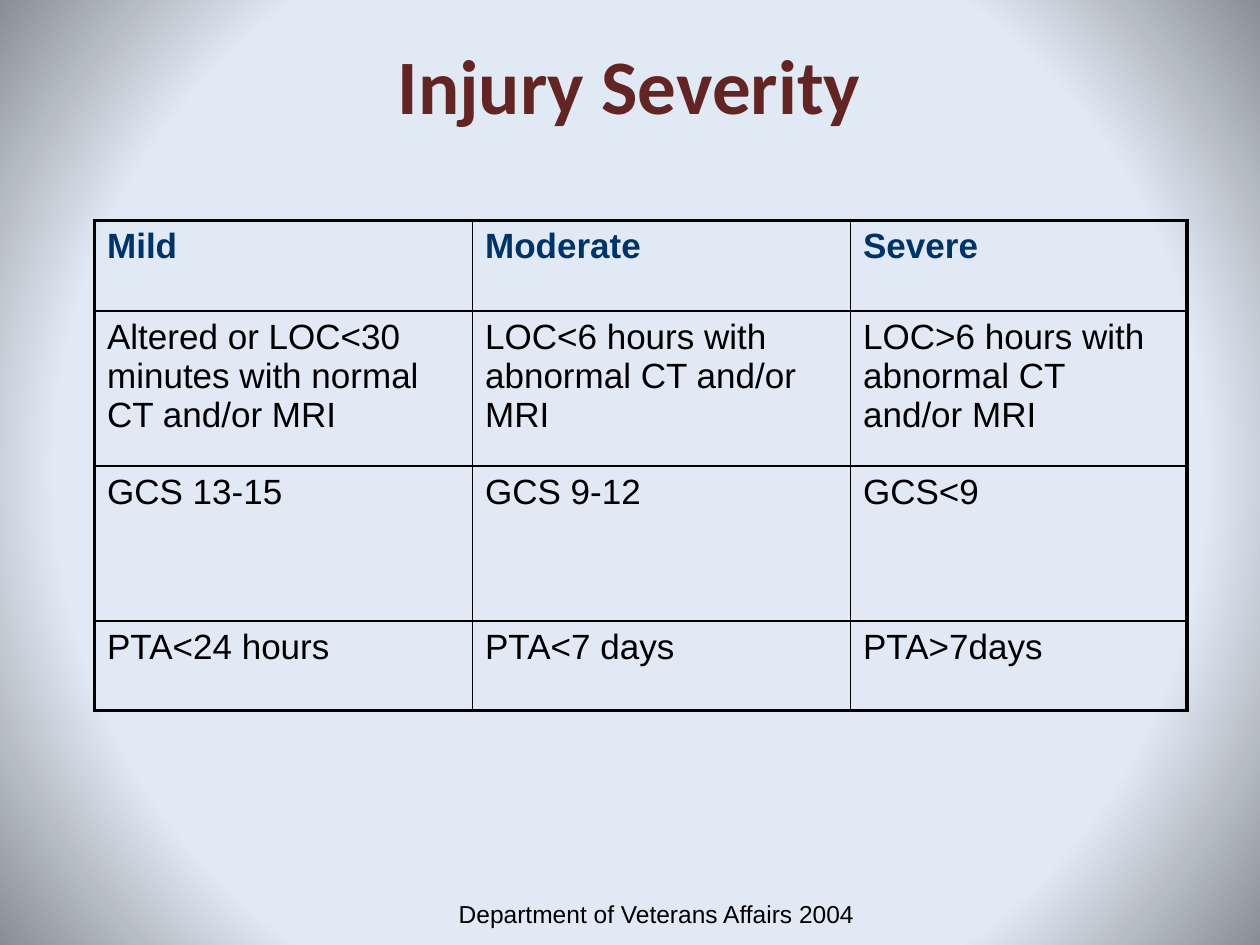
import lxml.etree
import pptx
import pptx.dml.color
import pptx.enum.text
import pptx.oxml.ns
import pptx.util

Inches = pptx.util.Inches
Pt = pptx.util.Pt
qn = pptx.oxml.ns.qn

BLACK = "000000"
MAROON = "632523"
NAVY = "003366"
PALE_BLUE = "E0E9F4"
GREY = "888E96"

OUTER_LINE, INNER_LINE = 2.25, 1
COLUMN_WIDTHS = [3, 3, 2.67]
ROW_HEIGHTS = [0.72, 1.23, 1.23, 0.71]
SEVERITY_ROWS = [
    ["Mild", "Moderate", "Severe"],
    ["Altered or LOC<30 minutes with normal CT and/or MRI",
     "LOC<6 hours with abnormal CT and/or MRI",
     "LOC>6 hours with abnormal CT and/or MRI"],
    ["GCS 13-15", "GCS 9-12", "GCS<9"],
    ["PTA<24 hours", "PTA<7 days", "PTA>7days"],
]


def rgb(color):
    return pptx.dml.color.RGBColor.from_string(color)


def style_font(font, name, size, color, bold=False):
    font.name = name
    font.size = Pt(size)
    font.bold = bold
    font.color.rgb = rgb(color)


def paint_background(slide):
    """Pale centre that darkens towards the corners."""
    fill = slide.background.fill
    fill.gradient()
    for stop, position, color in zip(fill.gradient_stops, (0.73, 1), (PALE_BLUE, GREY)):
        stop.position = position
        stop.color.rgb = rgb(color)
    gradient = next(slide.element.iter(qn("a:gradFill")))
    gradient.remove(gradient.find(qn("a:lin")))
    circle = lxml.etree.SubElement(gradient, qn("a:path"), path="circle")
    lxml.etree.SubElement(circle, qn("a:fillToRect"),
                          dict.fromkeys("ltrb", "50000"))


def add_centred_text(slide, box, text, **font):
    frame = slide.shapes.add_textbox(*map(Inches, box)).text_frame
    frame.word_wrap = True
    frame.vertical_anchor = pptx.enum.text.MSO_ANCHOR.MIDDLE
    paragraph = frame.paragraphs[0]
    paragraph.text = text
    paragraph.alignment = pptx.enum.text.PP_ALIGN.CENTER
    style_font(paragraph.font, **font)


def set_borders(cell, widths):
    """Draw the left, right, top and bottom borders, in that order."""
    properties = cell._tc.get_or_add_tcPr()
    for index, (side, width) in enumerate(zip("LRTB", widths)):
        border = lxml.etree.Element(qn(f"a:ln{side}"), w=str(Pt(width)))
        line_fill = lxml.etree.SubElement(border, qn("a:solidFill"))
        lxml.etree.SubElement(line_fill, qn("a:srgbClr"), val=BLACK)
        properties.insert(index, border)


def add_severity_table(slide, left, top):
    last_row, last_column = len(ROW_HEIGHTS) - 1, len(COLUMN_WIDTHS) - 1
    table = slide.shapes.add_table(
        len(ROW_HEIGHTS), len(COLUMN_WIDTHS), Inches(left), Inches(top),
        Inches(sum(COLUMN_WIDTHS)), Inches(sum(ROW_HEIGHTS))).table
    table.first_row = table.horz_banding = False
    for column, width in zip(table.columns, COLUMN_WIDTHS):
        column.width = Inches(width)
    for row, height in zip(table.rows, ROW_HEIGHTS):
        row.height = Inches(height)

    for r, texts in enumerate(SEVERITY_ROWS):
        for c, text in enumerate(texts):
            cell = table.cell(r, c)
            cell.fill.background()
            on_edge = (c == 0, c == last_column, r == 0, r == last_row)
            set_borders(cell, [OUTER_LINE if edge else INNER_LINE for edge in on_edge])
            paragraph = cell.text_frame.paragraphs[0]
            paragraph.text = text
            is_header = r == 0
            style_font(paragraph.font, "Arial", 20, NAVY if is_header else BLACK, is_header)


def build_slide(presentation):
    slide = presentation.slides.add_slide(presentation.slide_layouts[6])
    paint_background(slide)
    # Title
    add_centred_text(slide, (0.33, 0.25, 9.33, 0.83), "Injury Severity",
                     name="Calibri", size=44, color=MAROON, bold=True)
    # Severity criteria
    add_severity_table(slide, 0.75, 1.75)
    # Source line
    add_centred_text(slide, (3.42, 7, 3.58, 0.5), "Department of Veterans Affairs 2004",
                     name="Arial", size=14, color=BLACK)


def main():
    presentation = pptx.Presentation()
    presentation.slide_width = Inches(10)
    presentation.slide_height = Inches(7.5)
    build_slide(presentation)
    presentation.save("out.pptx")


if __name__ == "__main__":
    main()
